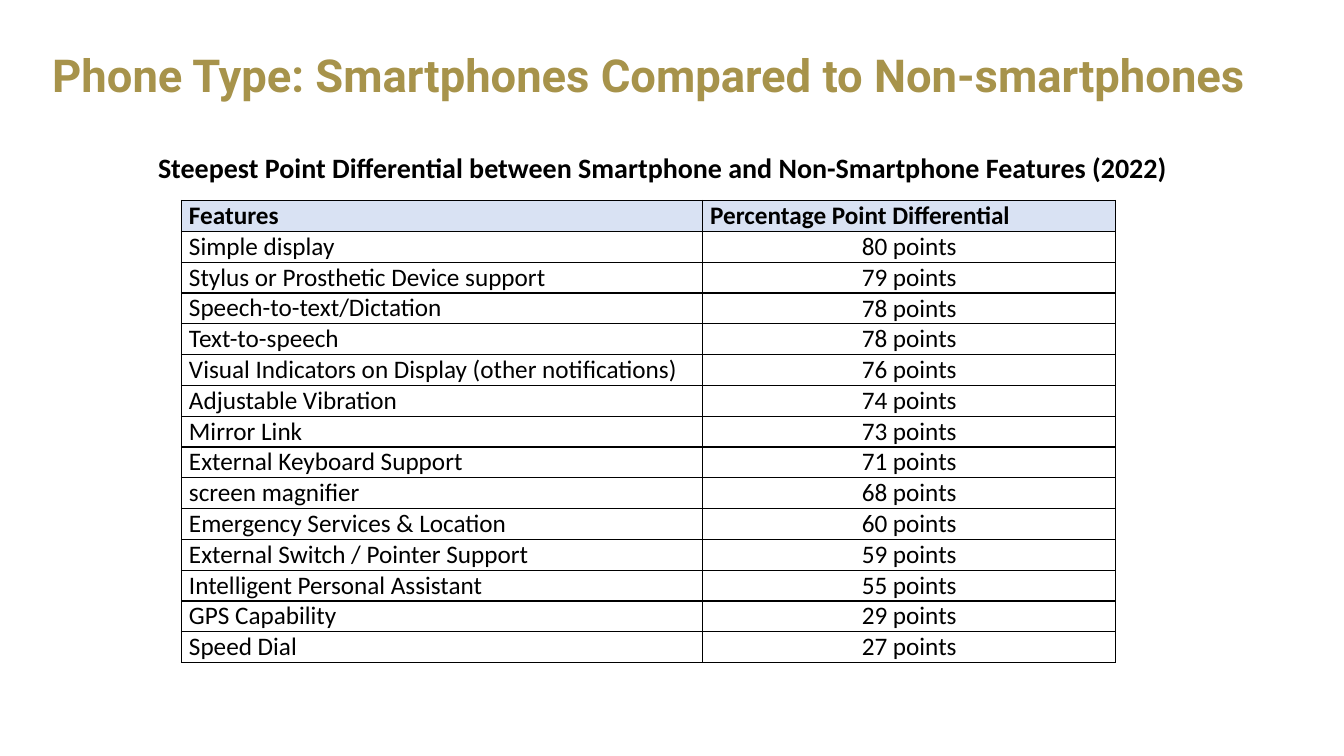
from lxml import etree
from pptx import Presentation
from pptx.dml.color import RGBColor
from pptx.enum.text import MSO_ANCHOR, PP_ALIGN
from pptx.oxml.ns import qn
from pptx.util import Pt

LEFT, CENTER, JUSTIFY = PP_ALIGN.LEFT, PP_ALIGN.CENTER, PP_ALIGN.JUSTIFY
TOP, MIDDLE, BOTTOM = MSO_ANCHOR.TOP, MSO_ANCHOR.MIDDLE, MSO_ANCHOR.BOTTOM

TITLE = "Phone Type: Smartphones Compared to Non-smartphones"
CAPTION = "Steepest Point Differential between Smartphone and Non-Smartphone Features (2022)"
HEADINGS = ("Features", "Percentage Point Differential")
DIFFERENTIALS = [
    ("Simple display", 80),
    ("Stylus or Prosthetic Device support", 79),
    ("Speech-to-text/Dictation", 78),
    ("Text-to-speech", 78),
    ("Visual Indicators on Display (other notifications)", 76),
    ("Adjustable Vibration", 74),
    ("Mirror Link", 73),
    ("External Keyboard Support", 71),
    ("screen magnifier", 68),
    ("Emergency Services & Location", 60),
    ("External Switch / Pointer Support", 59),
    ("Intelligent Personal Assistant", 55),
    ("GPS Capability", 29),
    ("Speed Dial", 27),
]
GOLD, BLACK, HEADING_BLUE = "A7934B", "000000", "D9E2F3"
COLUMN_WIDTHS = (372.25, 295.2)
ROW_HEIGHT = 22


def colour(hex_value):
    return RGBColor.from_string(hex_value)


def write(frame, text, size=18, font="Calibri", ink=BLACK, bold=False,
          align=LEFT, spacing=None):
    paragraph = frame.paragraphs[0]
    paragraph.alignment = align
    if spacing:
        paragraph.line_spacing = spacing
    run = paragraph.add_run()
    run.text = text
    run.font.size = Pt(size)
    run.font.name = font
    run.font.bold = bold
    run.font.color.rgb = colour(ink)


def add_text(slide, text, left, top, width, height, wrap=True, **style):
    frame = slide.shapes.add_textbox(Pt(left), Pt(top), Pt(width), Pt(height)).text_frame
    frame.word_wrap = wrap
    frame.vertical_anchor = MIDDLE
    write(frame, text, **style)


def draw_borders(cell):
    properties = cell._tc.get_or_add_tcPr()
    for side in ("a:lnL", "a:lnR", "a:lnT", "a:lnB"):
        border = etree.SubElement(properties, qn(side), w=str(Pt(1)))
        ink = etree.SubElement(border, qn("a:solidFill"))
        etree.SubElement(ink, qn("a:srgbClr"), val=BLACK)


def fill_cell(cell, text, fill=None, anchor=TOP, **style):
    cell.margin_left = cell.margin_right = Pt(5.4)
    cell.margin_top = cell.margin_bottom = Pt(0)
    cell.vertical_anchor = anchor
    draw_borders(cell)
    if fill:
        cell.fill.solid()
        cell.fill.fore_color.rgb = colour(fill)
    else:
        cell.fill.background()
    write(cell.text_frame, text, **style)


def add_differentials(slide):
    row_count = len(DIFFERENTIALS) + 1
    table = slide.shapes.add_table(
        row_count, len(HEADINGS), Pt(129.6), Pt(143.25),
        Pt(sum(COLUMN_WIDTHS)), Pt(row_count * ROW_HEIGHT)).table
    table.horz_banding = False
    table.first_row = False
    for column, width in zip(table.columns, COLUMN_WIDTHS):
        column.width = Pt(width)
    for row in table.rows:
        row.height = Pt(ROW_HEIGHT)
    for index, heading in enumerate(HEADINGS):
        fill_cell(table.cell(0, index), heading, fill=HEADING_BLUE, bold=True, align=JUSTIFY)
    for index, (feature, points) in enumerate(DIFFERENTIALS, 1):
        fill_cell(table.cell(index, 0), feature, align=JUSTIFY)
        fill_cell(table.cell(index, 1), f"{points} points", anchor=BOTTOM, align=CENTER)


def main():
    deck = Presentation()
    deck.slide_width, deck.slide_height = Pt(960), Pt(540)
    slide = deck.slides.add_slide(deck.slide_layouts[6])
    add_differentials(slide)
    add_text(slide, TITLE, 30.25, 15.85, 900, 80, size=32.4, font="Roboto",
             ink=GOLD, bold=True, spacing=0.9)
    add_text(slide, CAPTION, 105.1, 103.7, 736.55, 31.5, wrap=False, size=20,
             bold=True, align=CENTER)
    deck.save("out.pptx")


if __name__ == "__main__":
    main()
